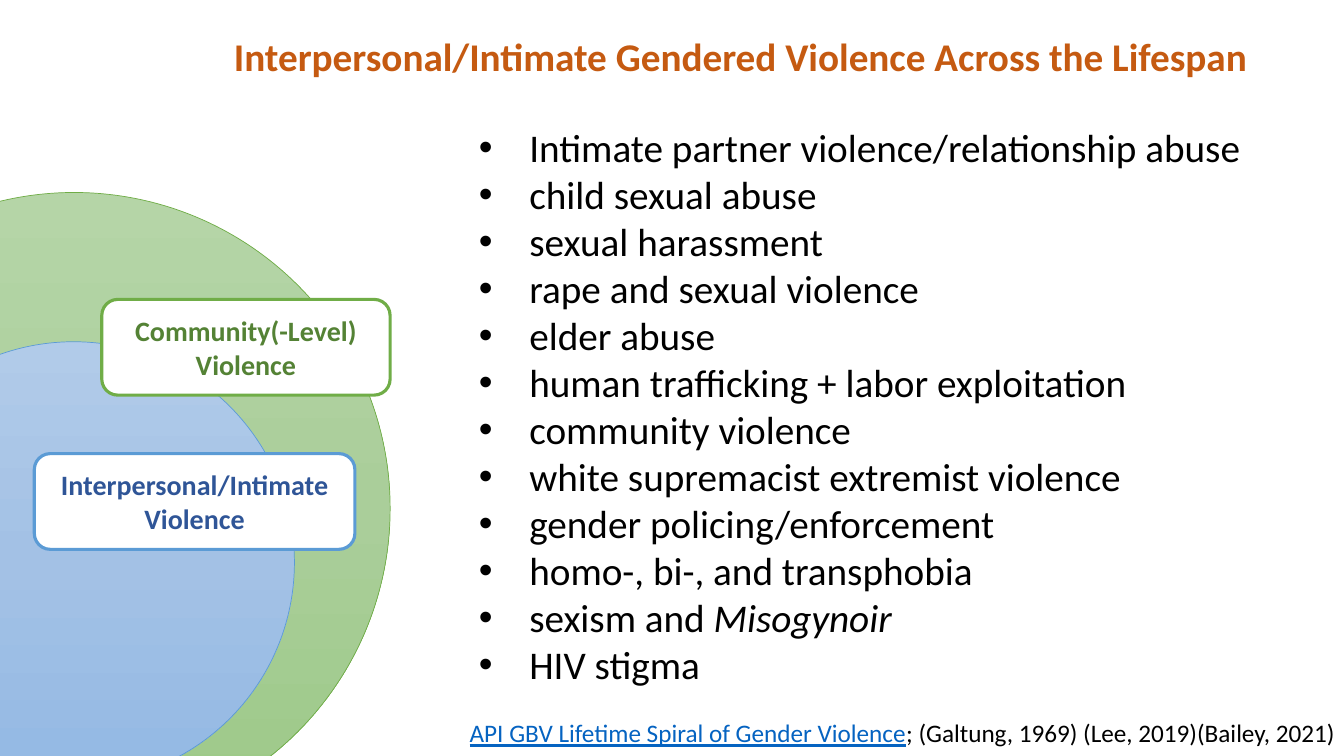
from copy import deepcopy
from dataclasses import dataclass

from lxml import etree
from pptx import Presentation
from pptx.dml.color import RGBColor
from pptx.enum import shapes, text
from pptx.oxml import ns
from pptx.util import Inches, Pt


@dataclass(frozen=True)
class Theme:
    font: str = "Calibri"
    heading: int = 28
    label: int = 20
    source: int = 18
    title: str = "C55A11"
    ink: str = "000000"
    link: str = "0563C1"
    white: str = "FFFFFF"


@dataclass(frozen=True)
class Level:
    """One circle of violence with its label."""
    label: str
    circle: tuple
    label_box: tuple
    gradient: tuple
    line: str
    ink: str


THEME = Theme()

LEVELS = [
    Level("Community(-Level) Violence", (-2.4, 1.91, 6.27, 6.27), (1.01, 2.97, 2.86, 0.95),
          ("B5D5A7", "AACE9A", "9CC987"), "70AD47", "548235"),
    Level("Interpersonal/Intimate Violence", (-1.46, 3.39, 4.38, 4.38), (0.34, 4.5, 3.18, 0.95),
          ("B1CBE9", "A3C1E5", "93B9E4"), "5B9BD5", "2F5597"),
]

# Each form of violence is a list of (words, italic) spans
FORMS = [[(words, False)] for words in (
    "Intimate partner violence/relationship abuse",
    "child sexual abuse",
    "sexual harassment",
    "rape and sexual violence",
    "elder abuse",
    "human trafficking + labor exploitation",
    "community violence",
    "white supremacist extremist violence",
    "gender policing/enforcement",
    "homo-, bi-, and transphobia",
)] + [[("sexism and ", False), ("Misogynoir", True)], [("HIV stigma", False)]]


def place(shape, box):
    shape.left, shape.top, shape.width, shape.height = map(Inches, box)


def add_span(para, words, size, color, bold=False, italic=False, underline=False):
    span = para.add_run()
    span.text = words
    font = span.font
    font.name, font.size = THEME.font, Pt(size)
    font.bold, font.italic, font.underline = bold, italic, underline
    font.color.rgb = RGBColor.from_string(color)


def add_outlined(page, kind, box, line, width):
    shape = page.shapes.add_shape(kind, *map(Inches, box))
    shape.shadow.inherit = False
    shape.line.color.rgb = RGBColor.from_string(line)
    shape.line.width = Pt(width)
    return shape


def add_title(page, box):
    title = page.shapes.title
    place(title, box)
    frame = title.text_frame
    frame.auto_size = text.MSO_AUTO_SIZE.NONE
    frame.vertical_anchor = text.MSO_ANCHOR.MIDDLE
    para = frame.paragraphs[0]
    para.alignment = text.PP_ALIGN.LEFT
    para.line_spacing = 0.9
    add_span(para, "Interpersonal/Intimate Gendered Violence Across the Lifespan",
             THEME.heading, THEME.title, bold=True)


def add_circle(page, level):
    circle = add_outlined(page, shapes.MSO_SHAPE.OVAL, level.circle, level.line, 0.5)
    circle.fill.gradient()
    circle.fill.gradient_angle = 270
    # The default gradient has two stops; add the middle one
    stop_list = circle.element.spPr.find(".//" + ns.qn("a:gsLst"))
    stop_list.insert(1, deepcopy(stop_list[0]))
    for stop, color, position in zip(circle.fill.gradient_stops, level.gradient, (0, 0.5, 1)):
        stop.color.rgb = RGBColor.from_string(color)
        stop.position = position


def add_label(page, level):
    label = add_outlined(page, shapes.MSO_SHAPE.ROUNDED_RECTANGLE, level.label_box,
                         level.line, 2.25)
    label.fill.solid()
    label.fill.fore_color.rgb = RGBColor.from_string(THEME.white)
    frame = label.text_frame
    frame.word_wrap = True
    frame.vertical_anchor = text.MSO_ANCHOR.MIDDLE
    para = frame.paragraphs[0]
    para.alignment = text.PP_ALIGN.CENTER
    add_span(para, level.label, THEME.label, level.ink, bold=True)


def add_bullet(para, margin, hanging):
    props = para._p.get_or_add_pPr()
    props.set("marL", str(Inches(margin)))
    props.set("indent", str(-Inches(hanging)))
    etree.SubElement(props, ns.qn("a:buFont"), typeface="Arial")
    etree.SubElement(props, ns.qn("a:buChar"), char="•")


def add_forms(page, box):
    body = page.placeholders[1]
    place(body, box)
    frame = body.text_frame
    frame.auto_size = text.MSO_AUTO_SIZE.NONE
    frame.vertical_anchor = text.MSO_ANCHOR.TOP
    for index, spans in enumerate(FORMS):
        para = frame.add_paragraph() if index else frame.paragraphs[0]
        add_bullet(para, 0.7, 0.5)
        para.space_before = Pt(0)
        for words, italic in spans:
            add_span(para, words, THEME.heading, THEME.ink, italic=italic)


def add_sources(page, box):
    frame = page.shapes.add_textbox(*map(Inches, box)).text_frame
    frame.word_wrap = True
    para = frame.paragraphs[0]
    add_span(para, "API GBV Lifetime Spiral of Gender Violence",
             THEME.source, THEME.link, underline=True)
    add_span(para, "; (Galtung, 1969) (Lee, 2019)(Bailey, 2021)", THEME.source, THEME.ink)


def main():
    deck = Presentation()
    deck.slide_width, deck.slide_height = Inches(13.33), Inches(7.5)
    page = deck.slides.add_slide(deck.slide_layouts[1])

    add_title(page, (2.22, 0, 10.39, 1.17))

    # Nested circles first, then labels on top
    for level in LEVELS:
        add_circle(page, level)
    for level in LEVELS:
        add_label(page, level)

    # List and its sources
    add_forms(page, (4.45, 1.17, 8.5, 5.76))
    add_sources(page, (4.56, 7.07, 8.98, 0.71))

    deck.save("out.pptx")


if __name__ == "__main__":
    main()
